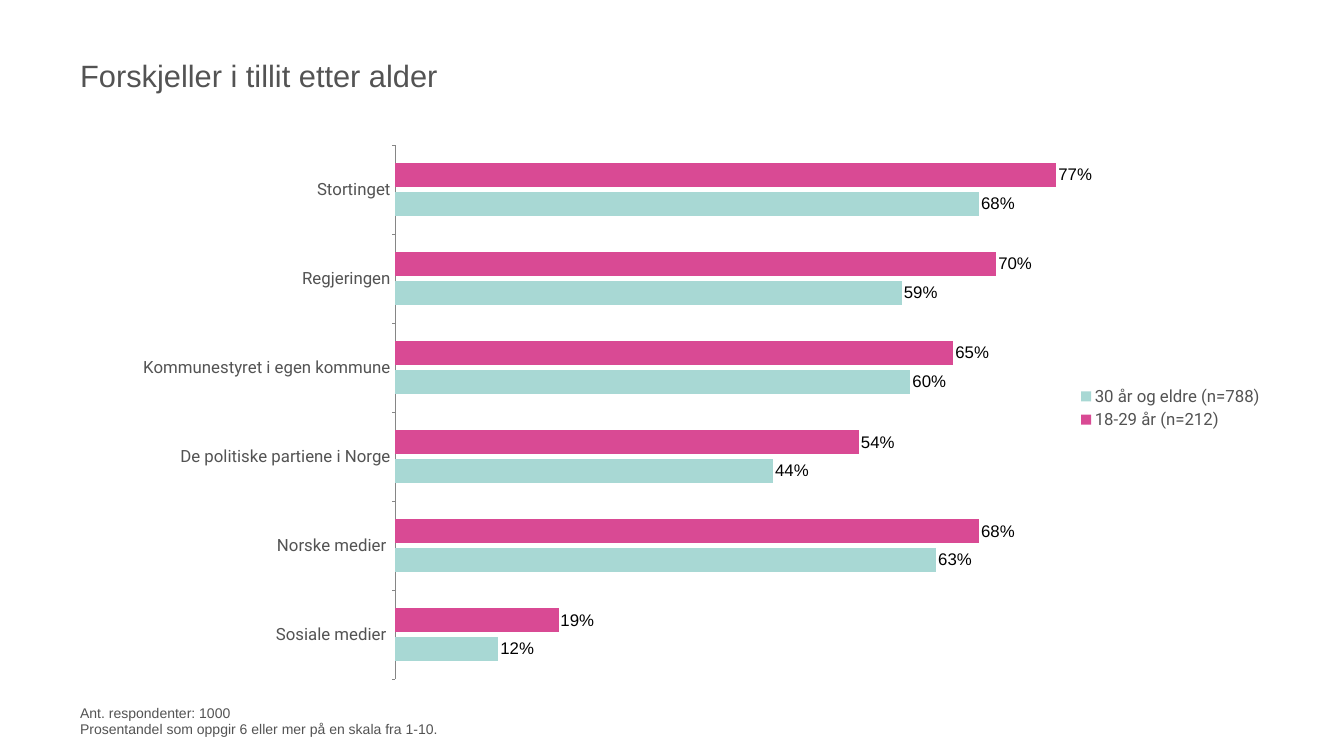
"""Build a slide comparing trust in institutions by age group."""
from dataclasses import dataclass

import pptx
import pptx.chart.data
import pptx.dml.color
import pptx.enum.chart
import pptx.enum.text
import pptx.oxml
import pptx.oxml.ns
import pptx.util
from pptx.util import Inches

LEFT, WIDTH = 1.53, 23.66
INSET = 0.06
GREY, BLACK = "535353", "000000"
INSTITUTIONS = [
    "Stortinget",
    "Regjeringen",
    "Kommunestyret i egen kommune",
    "De politiske partiene i Norge",
    "Norske medier ",
    "Sosiale medier ",
]
FOOTNOTE = [
    "Ant. respondenter: 1000",
    "Prosentandel som oppgir 6 eller mer på en skala fra 1-10.",
]


@dataclass
class AgeGroup:
    """One age group with its bar colour and trust shares."""
    name: str
    color: str
    shares: list[float]


AGE_GROUPS = [
    AgeGroup("18-29 år (n=212)", "D94A94", [0.77, 0.7, 0.65, 0.54, 0.68, 0.19]),
    AgeGroup("30 år og eldre (n=788)", "A8D8D4", [0.68, 0.59, 0.6, 0.44, 0.63, 0.12]),
]


def rgb(color: str) -> pptx.dml.color.RGBColor:
    """Turn a hex string into a colour."""
    return pptx.dml.color.RGBColor.from_string(color)


def style_font(font, size: float, color: str, name: str = "Arial") -> None:
    """Set size, colour and typeface of a font."""
    font.size = pptx.util.Pt(size)
    font.color.rgb = rgb(color)
    font.name = name


def write_lines(shape, top: float, height: float, lines: list[str], size: float,
                anchor, top_inset: float = INSET) -> None:
    """Place a text shape and fill it with lines of one paragraph."""
    shape.left, shape.top = Inches(LEFT), Inches(top)
    shape.width, shape.height = Inches(WIDTH), Inches(height)
    frame = shape.text_frame
    frame.word_wrap = True
    frame.auto_size = pptx.enum.text.MSO_AUTO_SIZE.NONE
    frame.vertical_anchor = anchor
    frame.margin_left = frame.margin_right = frame.margin_bottom = Inches(INSET)
    frame.margin_top = Inches(top_inset)
    paragraph = frame.paragraphs[0]
    paragraph.alignment = pptx.enum.text.PP_ALIGN.LEFT
    for index, line in enumerate(lines):
        if index:
            paragraph.add_line_break()
        run = paragraph.add_run()
        run.text = line
        style_font(run.font, size, GREY)


def fix_plot_area(chart, x: float, y: float, w: float, h: float) -> None:
    """Pin the inner plot area to fractions of the chart."""
    plot_area = chart.plots[0]._element.getparent()
    for layout in plot_area.findall(pptx.oxml.ns.qn("c:layout")):
        plot_area.remove(layout)
    plot_area.insert(0, pptx.oxml.parse_xml(
        f'<c:layout {pptx.oxml.ns.nsdecls("c")}><c:manualLayout>'
        '<c:layoutTarget val="inner"/><c:xMode val="edge"/><c:yMode val="edge"/>'
        f'<c:x val="{x}"/><c:y val="{y}"/><c:w val="{w}"/><c:h val="{h}"/>'
        '</c:manualLayout></c:layout>'))


def add_trust_chart(slide) -> None:
    """Add the clustered bars of trust by age group."""
    trust = pptx.chart.data.CategoryChartData(number_format="0%")
    trust.categories = INSTITUTIONS
    for group in AGE_GROUPS:
        trust.add_series(group.name, group.shares)
    chart = slide.shapes.add_chart(
        pptx.enum.chart.XL_CHART_TYPE.BAR_CLUSTERED,
        Inches(LEFT), Inches(2.51), Inches(WIDTH), Inches(11.17), trust).chart
    style_font(chart.font, 10, BLACK)
    chart.has_title = False
    chart.has_legend = True
    chart.legend.position = pptx.enum.chart.XL_LEGEND_POSITION.RIGHT
    chart.legend.include_in_layout = False
    style_font(chart.legend.font, 24, GREY, "Roboto")

    institutions = chart.category_axis
    institutions.reverse_order = True
    institutions.has_major_gridlines = False
    institutions.major_tick_mark = pptx.enum.chart.XL_TICK_MARK.OUTSIDE
    institutions.format.line.color.rgb = rgb("868686")
    institutions.format.line.width = pptx.util.Pt(0.75)
    style_font(institutions.tick_labels.font, 24, GREY, "Roboto")

    shares = chart.value_axis
    shares.minimum_scale, shares.maximum_scale = 0, 0.9
    shares.has_major_gridlines = False
    shares.visible = False

    bars = chart.plots[0]
    bars.gap_width, bars.overlap = 150, -20
    bars.vary_by_categories = False
    for group, series in zip(AGE_GROUPS, bars.series):
        series.format.fill.solid()
        series.format.fill.fore_color.rgb = rgb(group.color)
        series.invert_if_negative = False
        labels = series.data_labels
        labels.show_value = True
        labels.number_format = "0%"
        labels.number_format_is_linked = False
        labels.position = pptx.enum.chart.XL_LABEL_POSITION.OUTSIDE_END
        style_font(labels.font, 24, BLACK)
    fix_plot_area(chart, 0.267, 0.033, 0.648, 0.949)


def main() -> None:
    """Create the presentation and save it."""
    presentation = pptx.Presentation()
    presentation.slide_width, presentation.slide_height = Inches(26.67), Inches(15)
    slide = presentation.slides.add_slide(presentation.slide_layouts[5])
    anchors = pptx.enum.text.MSO_ANCHOR
    write_lines(slide.shapes.title, 0.47, 2.04,
                ["Forskjeller i tillit etter alder"], 44, anchors.MIDDLE)
    add_trust_chart(slide)
    footnote = slide.shapes.add_textbox(0, 0, 0, 0)
    write_lines(footnote, 13.68, 0.9, FOOTNOTE, 20, anchors.TOP, top_inset=0.29)
    presentation.save("out.pptx")


if __name__ == "__main__":
    main()
